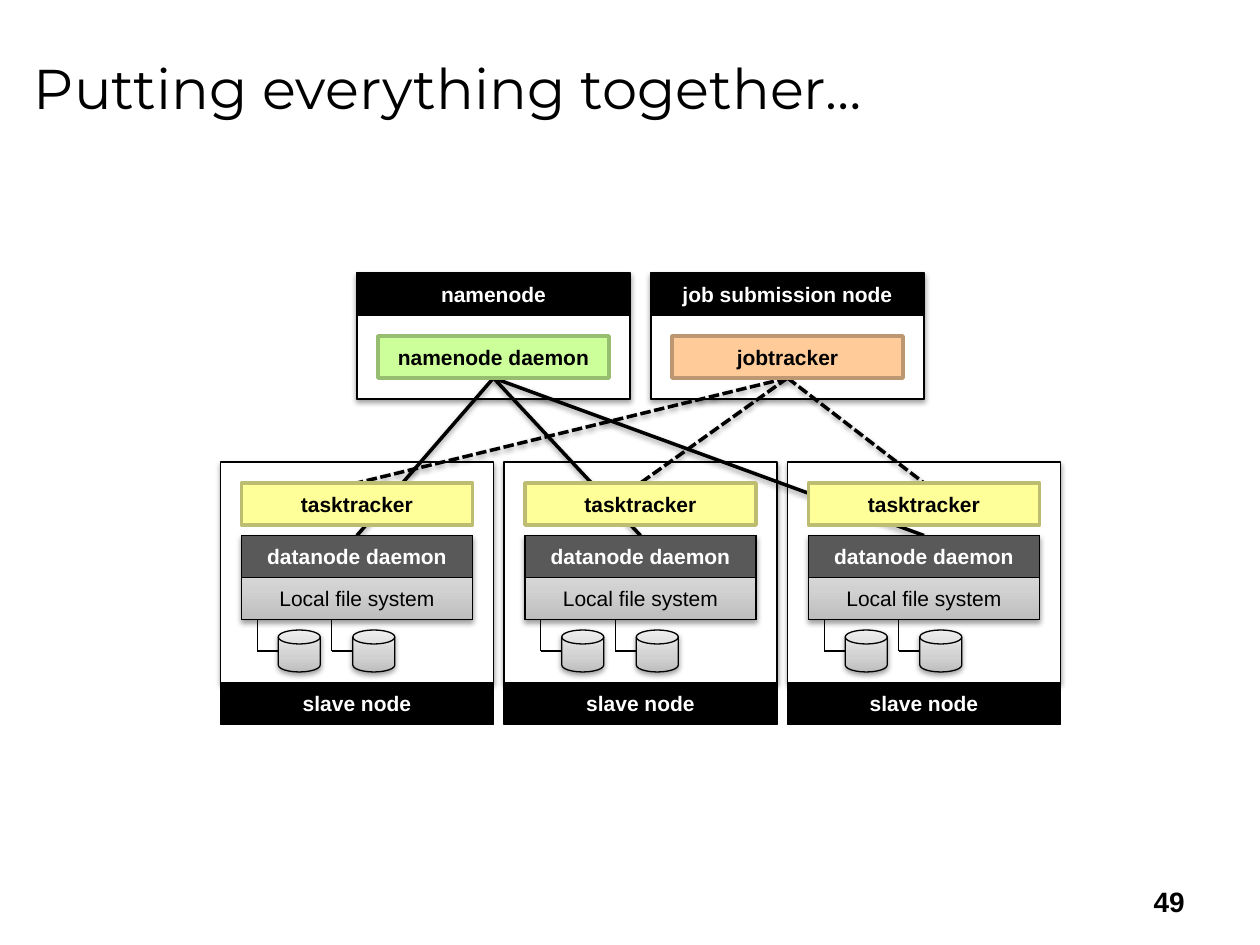
from lxml.etree import SubElement
from pptx import Presentation
from pptx.dml.color import RGBColor
from pptx.enum.dml import MSO_LINE as Dash
from pptx.enum.shapes import MSO_CONNECTOR as Link, MSO_SHAPE as Kind
from pptx.enum.text import MSO_ANCHOR as Anchor, PP_ALIGN as Align
from pptx.oxml.ns import qn
from pptx.util import Cm, Pt

TITLE = "Putting everything together…"
PAGE = "49"
# left edge, node name, daemon, fill, line, dash of its links, target in a slave
HEADS = [
    (34, "namenode", "namenode daemon", "CCFF99", "97BD71", None, "data"),
    (62, "job submission node", "jobtracker", "FFCC99", "BD9771",
     Dash.SQUARE_DOT, "task"),
]
SLAVES = [21, 48, 75]
DISKS = [3.5, 10.6]
GREY = [(0, "BDBDBD"), (35, "D1D1D1"), (100, "EEEEEE")]
BLACK, WHITE = "000000", "FFFFFF"

# Grid units: twelve to the inch
WIDE, INNER, ROW, PAD = 26, 22, 4, 2
HEAD_Y, HEAD_H = 26, 12
SLAVE_Y, SLAVE_H = 44, 21
TASK_Y, DATA_Y, DISK_Y = 46, 51, 60


def unit(n):
    """Turn grid units into a length."""
    return Cm(n * 2.54 / 12)


def color(code):
    return RGBColor.from_string(code)


def write(frame, text, size, code, bold=False, align=Align.CENTER, font="Arial"):
    frame.word_wrap = True
    frame.vertical_anchor = Anchor.MIDDLE
    par = frame.paragraphs[0]
    par.alignment = align
    run = par.add_run()
    run.text = text
    run.font.size, run.font.bold, run.font.name = Pt(size), bold, font
    run.font.color.rgb = color(code)


def shade(item):
    """Give a soft shadow that falls straight down."""
    props = item._element.spPr
    old = props.find(qn("a:effectLst"))
    list_ = SubElement(props, qn("a:effectLst")) if old is None else old
    drop = SubElement(list_, qn("a:outerShdw"), blurRad="40000", dist="20000",
                      dir="5400000", rotWithShape="0")
    tone = SubElement(drop, qn("a:srgbClr"), val=BLACK)
    SubElement(tone, qn("a:alpha"), val="38000")


def blend(shape):
    """Fill with grey that grows lighter towards the top."""
    shape.fill.gradient()
    shape.fill.gradient_angle = 90
    stops = shape._element.spPr.find(".//" + qn("a:gsLst"))
    for stop in list(stops):
        stops.remove(stop)
    for pos, code in GREY:
        stop = SubElement(stops, qn("a:gs"), pos=str(pos * 1000))
        SubElement(stop, qn("a:srgbClr"), val=code)


def box(x, y, w, h, fill=None, line=BLACK, width=0.75, text="", ink=BLACK,
        bold=True, kind=Kind.RECTANGLE, shadow=False):
    shape = shapes.add_shape(kind, unit(x), unit(y), unit(w), unit(h))
    shape.shadow.inherit = False
    if fill is None:
        shape.fill.background()
    elif fill is GREY:
        blend(shape)
    else:
        shape.fill.solid()
        shape.fill.fore_color.rgb = color(fill)
    shape.line.color.rgb = color(line)
    shape.line.width = Pt(width)
    if text:
        write(shape.text_frame, text, 12, ink, bold)
    if shadow:
        shade(shape)
    return shape


def wire(x1, y1, x2, y2, width=0.75, dash=None, shadow=False):
    line = shapes.add_connector(Link.STRAIGHT, unit(x1), unit(y1), unit(x2), unit(y2))
    line.line.color.rgb = color(BLACK)
    line.line.width = Pt(width)
    if dash:
        line.line.dash_style = dash
    if shadow:
        shade(line)
    else:
        SubElement(line._element.spPr, qn("a:effectLst"))
    return line


def slave(x):
    """Draw the contents of a slave node; return the boxes that links reach."""
    left = x + PAD
    box(left, DATA_Y, INNER, 2 * ROW, GREY, shadow=True)
    data = box(left, DATA_Y, INNER, ROW, "595959", text="datanode daemon", ink=WHITE)
    box(left, DATA_Y + ROW, INNER, ROW, text="Local file system", bold=False)
    for step in DISKS:
        stem, mid = x + step, DISK_Y + ROW / 2
        box(stem + 2, DISK_Y, ROW, ROW, GREY, kind=Kind.FLOWCHART_MAGNETIC_DISK,
            shadow=True)
        wire(stem, DATA_Y + 2 * ROW, stem, mid)
        wire(stem, mid, stem + 2, mid)
    task = box(left, TASK_Y, INNER, ROW, "FFFF99", "BDBD71", 2, "tasktracker")
    box(x, SLAVE_Y + SLAVE_H, WIDE, ROW, BLACK, text="slave node", ink=WHITE)
    return {"data": data, "task": task}


deck = Presentation()
deck.slide_width, deck.slide_height = Cm(25.4), Cm(19.05)
slide = deck.slides.add_slide(deck.slide_layouts[5])
shapes = slide.shapes

title = shapes.title
title.left, title.top, title.width, title.height = Cm(0.43), Cm(0.33), Cm(24.13), Cm(2.84)
write(title.text_frame, TITLE, 32, BLACK, align=Align.LEFT, font="Montserrat")

for head in HEADS:
    box(head[0], HEAD_Y, WIDE, HEAD_H, WHITE, shadow=True)
for x in SLAVES:
    box(x, SLAVE_Y, WIDE, SLAVE_H, WHITE, shadow=True)

# Links lie behind the boxes, so they are drawn first and joined at the end
ends = {"data": DATA_Y, "task": TASK_Y}
links = [[wire(hx + WIDE / 2, HEAD_Y + 10, x + WIDE / 2, ends[goal], 2, dash, True)
          for x in SLAVES]
         for hx, *_, dash, goal in HEADS]

nodes = [slave(x) for x in SLAVES]
for (x, name, job, fill, edge, _, goal), row in zip(HEADS, links):
    box(x, HEAD_Y, WIDE, ROW, BLACK, text=name, ink=WHITE)
    box(x, HEAD_Y + ROW, WIDE, HEAD_H - ROW)
    daemon = box(x + PAD, HEAD_Y + 6, INNER, ROW, fill, edge, 2, job)
    for link, node in zip(row, nodes):
        link.begin_connect(daemon, 2)
        link.end_connect(node[goal], 0)

page = shapes.add_textbox(Cm(18.21), Cm(17.65), Cm(5.92), Cm(1.02))
write(page.text_frame, PAGE, 16, BLACK, True, Align.RIGHT)

deck.save("out.pptx")
